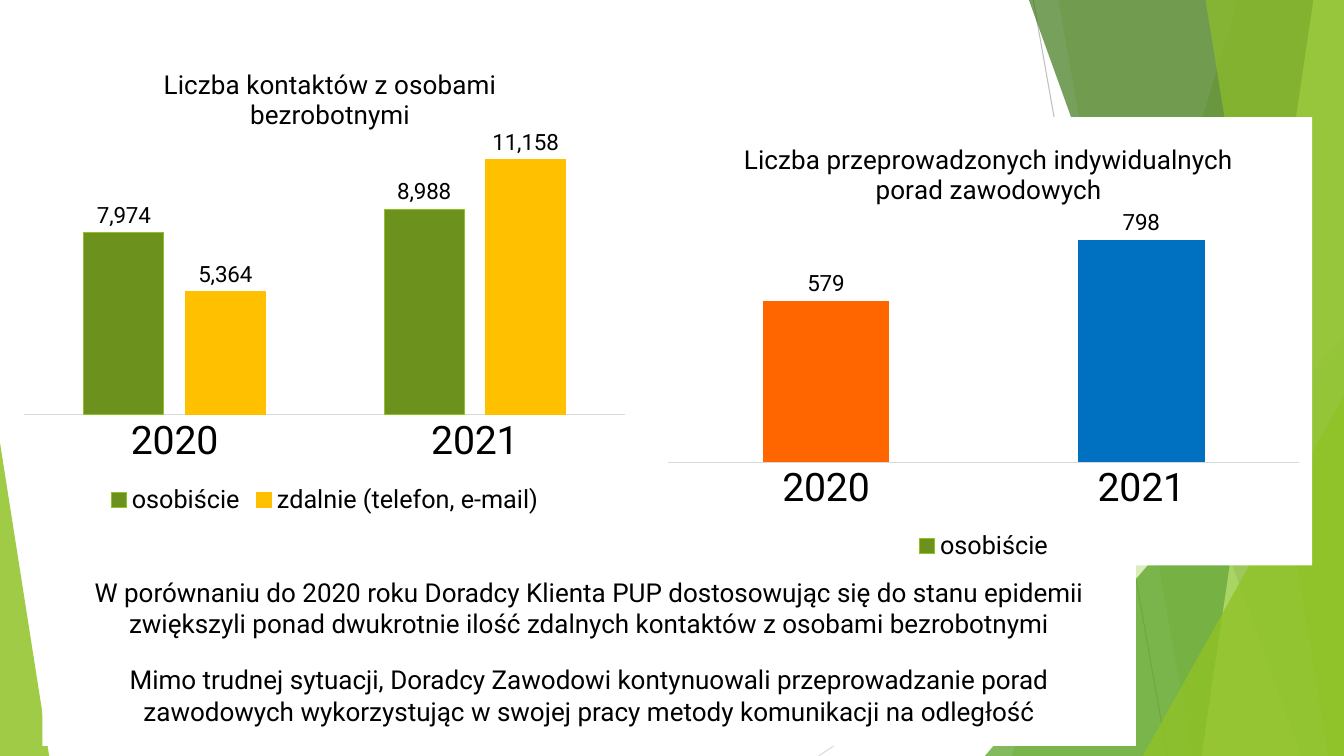
from lxml.etree import SubElement
from pptx import Presentation
from pptx.chart.data import CategoryChartData as Data
from pptx.dml.color import RGBColor as RGB
from pptx.enum.chart import XL_CHART_TYPE as Kind, XL_LABEL_POSITION as Spot
from pptx.enum.chart import XL_LEGEND_POSITION as Side, XL_TICK_MARK as Tick
from pptx.enum.shapes import MSO_CONNECTOR as Link, MSO_SHAPE as Form
from pptx.enum.text import MSO_ANCHOR as Anchor, PP_ALIGN as Align
from pptx.oxml import parse_xml
from pptx.oxml.ns import qn
from pptx.util import Cm, Pt

FONT = "Roboto"
CHART = "http://schemas.openxmlformats.org/drawingml/2006/chart"


def paint(item, color, alpha=100):
    item.fill.solid()
    item.fill.fore_color.rgb = RGB.from_string(color)
    if alpha < 100:
        tint = item.fill._xPr.find(qn("a:solidFill"))[0]
        SubElement(tint, qn("a:alpha"), val=str(alpha * 1000))


def style(font, size):
    font.name = FONT
    font.size = Pt(size)
    font.bold = False
    font.color.rgb = RGB.from_string("000000")


deck = Presentation()
deck.slide_width = Cm(33.87)
deck.slide_height = Cm(19.05)
slide = deck.slides.add_slide(deck.slide_layouts[6])
shapes = slide.shapes

rays = [
    (26.04, 0, 29.42, 19.05, "BFBFBF"),
    (33.87, 10.23, 20.63, 19.05, "D9D9D9"),
]
for x1, y1, x2, y2, color in rays:
    ray = shapes.add_connector(Link.STRAIGHT, Cm(x1), Cm(y1), Cm(x2), Cm(y2))
    ray.line.color.rgb = RGB.from_string(color)
    ray.line.width = Pt(0.75)
    SubElement(ray._element.spPr, qn("a:effectLst"))

bands = [
    ("band", 31.19, 25.5, "90C226", 30),
    ("band", 26.67, 30.05, "90C226", 20),
    ("wedge", 24.82, 8.46, 9.05, 1, "54A021", 72),
    ("band", 25.93, 32.79, "3F7819", 70),
    ("band", 33.1, 30.28, "C0E474", 70),
    ("band", 30.38, 33.48, "90C226", 65),
    ("wedge", 28.8, 9.98, 5.07, 1, "90C226", 80),
    ("wedge", 0, 11.15, 1.24, 0, "90C226", 85),
]
for kind, *place, color, alpha in bands:
    if kind == "band":
        top, foot = place
        path = shapes.build_freeform(Cm(top), 0)
        path.add_line_segments(
            [(Cm(33.87), 0), (Cm(33.87), Cm(19.05)), (Cm(foot), Cm(19.05))])
        band = path.convert_to_shape()
    else:
        left, top, width, tip = place
        band = shapes.add_shape(Form.ISOSCELES_TRIANGLE, Cm(left), Cm(top),
                                Cm(width), Cm(19.05 - top))
        band.adjustments[0] = tip
    band.shadow.inherit = False
    band.line.fill.background()
    paint(band, color, alpha)

plots = [
    ("Liczba kontaktów z osobami bezrobotnymi",
     (0.3, 0.99, 15.77, 12.12), 12000, (0.235, 0.048), (0.02, 0.21, 0.96, 0.57), None,
     [("osobiście", (7974, 8988), "6C921D", "90C226", []),
      ("zdalnie (telefon, e-mail)", (5364, 11158), "FFC000", "FFC000", [])]),
    ("Liczba przeprowadzonych indywidualnych porad zawodowych",
     (16.51, 2.95, 16.56, 11.3), 900, (0.128, 0.045), (0.02, 0.21, 0.96, 0.56), "FFFFFF",
     [("osobiście", (579, 798), "6C921D", "90C226", ["FF6600", "0070C0"])]),
]
for title, box, peak, head, area, back, rows in plots:
    data = Data(number_format="#,##0")
    data.categories = ["2020", "2021"]
    for name, vals, *rest in rows:
        data.add_series(name, vals)
    chart = shapes.add_chart(Kind.COLUMN_CLUSTERED, *map(Cm, box), data).chart
    style(chart.font, 10)

    para = chart.chart_title.text_frame.paragraphs[0]
    para.text = title
    style(para.font, 18.6)
    chart.chart_title.include_in_layout = False

    chart.has_legend = True
    chart.legend.position = Side.BOTTOM
    chart.legend.include_in_layout = False
    style(chart.legend.font, 18)

    cat = chart.category_axis
    cat.major_tick_mark = Tick.NONE
    cat.format.line.color.rgb = RGB.from_string("D9D9D9")
    cat.format.line.width = Pt(0.75)
    style(cat.tick_labels.font, 28)
    val = chart.value_axis
    val.minimum_scale = 0
    val.maximum_scale = peak
    val.has_major_gridlines = False
    val.visible = False

    plot = chart.plots[0]
    plot.gap_width = 149
    plot.overlap = -27
    plot.vary_by_categories = False
    for bars, (name, vals, color, edge, tints) in zip(plot.series, rows):
        paint(bars.format, color)
        bars.format.line.color.rgb = RGB.from_string(edge)
        bars.format.line.width = Pt(0.75)
        for i, tint in enumerate(tints):
            paint(bars.points[i].format, tint)
        tags = bars.data_labels
        tags.show_value = True
        tags.number_format = "#,##0"
        tags.number_format_is_linked = False
        tags.position = Spot.OUTSIDE_END
        style(tags.font, 16)

    root = chart._chartSpace
    for tag, spots in (("c:title", head), ("c:plotArea", area)):
        inner = '<c:layoutTarget val="inner"/>' if tag == "c:plotArea" else ""
        modes = "".join(f'<c:{k}Mode val="edge"/>' for k in "xy")
        sizes = "".join(f'<c:{k} val="{v}"/>' for k, v in zip("xywh", spots))
        node = root.chart.find(qn(tag))
        for old in node.findall(qn("c:layout")):
            node.remove(old)
        node.insert(1 if tag == "c:title" else 0, parse_xml(
            f'<c:layout xmlns:c="{CHART}"><c:manualLayout>{inner}{modes}{sizes}'
            '</c:manualLayout></c:layout>'))
    if back:
        fill = parse_xml(
            f'<c:spPr xmlns:c="{CHART}" '
            'xmlns:a="http://schemas.openxmlformats.org/drawingml/2006/main">'
            f'<a:solidFill><a:srgbClr val="{back}"/></a:solidFill>'
            '<a:ln><a:noFill/></a:ln></c:spPr>')
        root.chart.addnext(fill)

notes = [
    (14.02, "W porównaniu do 2020 roku Doradcy Klienta PUP dostosowując się do stanu "
     "epidemii zwiększyli ponad dwukrotnie ilość zdalnych kontaktów z osobami bezrobotnymi"),
    (16.23, "Mimo trudnej sytuacji, Doradcy Zawodowi kontynuowali przeprowadzanie porad "
     "zawodowych wykorzystując w swojej pracy metody komunikacji na odległość"),
]
for top, text in notes:
    note = shapes.add_shape(Form.RECTANGLE, Cm(1.07), Cm(top), Cm(27.56), Cm(2.57))
    note.shadow.inherit = False
    note.line.fill.background()
    paint(note, "FFFFFF")
    frame = note.text_frame
    frame.word_wrap = True
    frame.vertical_anchor = Anchor.MIDDLE
    para = frame.paragraphs[0]
    para.text = text
    para.alignment = Align.CENTER
    style(para.font, 18.6)

deck.save("out.pptx")
